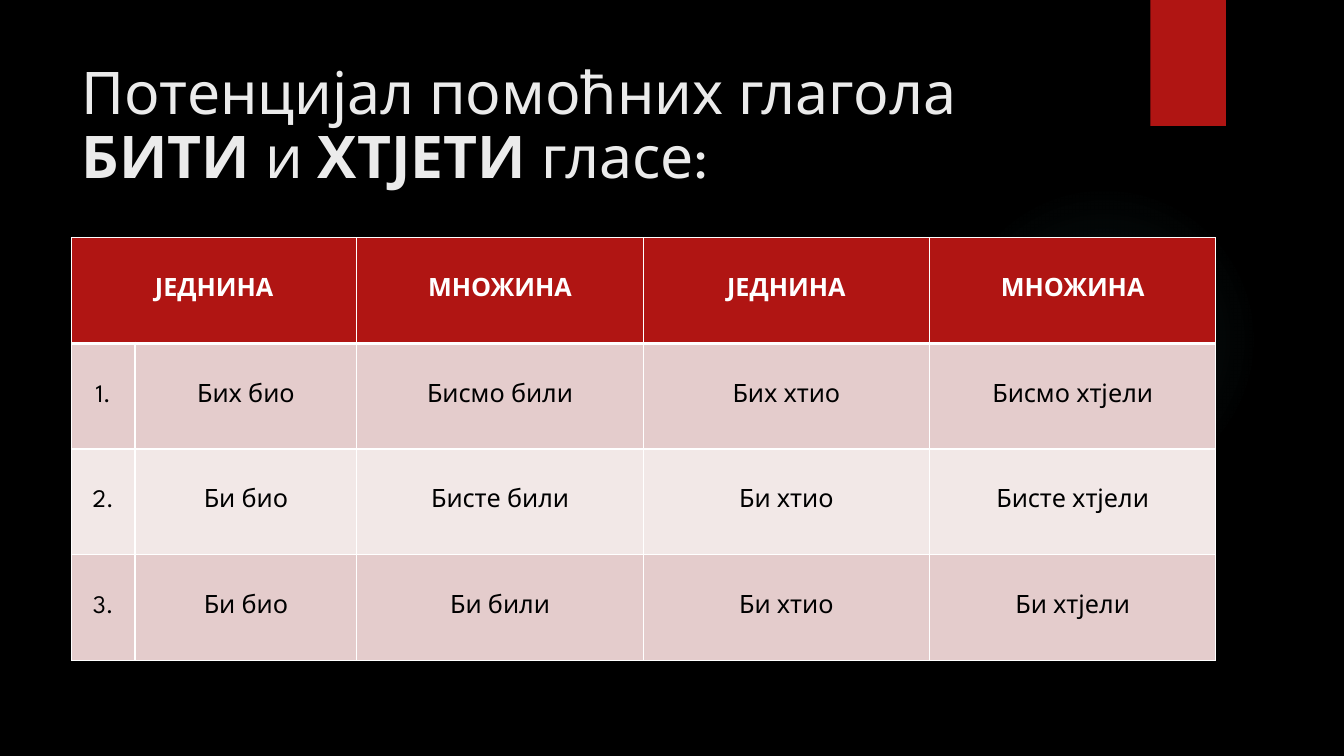
from lxml import etree
from pptx import Presentation
from pptx import util as u
from pptx.dml.color import RGBColor
from pptx.enum import shapes, text
from pptx.oxml import parse_xml
from pptx.oxml.ns import nsdecls, qn

FONT = "League Spartan"
BLACK, WHITE, RED = "000000", "FFFFFF", "B01513"
TITLE_COLOR, GLOW = "EBEBEB", "50B9C1"
BANDS = ("E4CCCC", "F2E8E7")

TITLE_RUNS = [("Потенцијал помоћних глагола ", False), ("БИТИ ", True),
              ("и ", False), ("ХТЈЕТИ ", True), ("гласе:", False)]
CONJUGATION = [
    ["ЈЕДНИНА", "", "МНОЖИНА", "ЈЕДНИНА", "МНОЖИНА"],
    ["1.", "Бих био", "Бисмо били", "Бих хтио", "Бисмо хтјели"],
    ["2.", "Би био", "Бисте били", "Би хтио", "Бисте хтјели"],
    ["3.", "Би био", "Би били", "Би хтио", "Би хтјели"],
]
COLUMN_WIDTHS = [0.63, 2.2, 2.84, 2.84, 2.84]


def paint(fill, color):
    fill.solid()
    fill.fore_color.rgb = RGBColor.from_string(color)


def style_font(font, size, color, bold=None):
    font.name, font.size, font.bold = FONT, u.Pt(size), bold
    font.color.rgb = RGBColor.from_string(color)


def add_plain_shape(slide, kind, box):
    shape = slide.shapes.add_shape(kind, *map(u.Inches, box))
    shape.shadow.inherit = False
    shape.line.fill.background()
    return shape


def add_backdrop(slide, glow_box, tab_box):
    paint(slide.background.fill, BLACK)

    # Faint glow, fading outwards
    glow = add_plain_shape(slide, shapes.MSO_SHAPE.OVAL, glow_box)
    stops = "".join(
        f'<a:gs pos="{pos * 1000}"><a:srgbClr val="{GLOW}">'
        f'<a:alpha val="{alpha * 1000}"/></a:srgbClr></a:gs>'
        for pos, alpha in [(0, 7), (36, 6), (69, 0)])
    gradient = parse_xml(
        f'<a:gradFill {nsdecls("a")}><a:gsLst>{stops}</a:gsLst><a:path path="circle">'
        '<a:fillToRect l="50000" t="50000" r="50000" b="50000"/></a:path></a:gradFill>')
    glow._element.spPr.find(qn("a:prstGeom")).addnext(gradient)

    # Red tab at the top edge
    tab = add_plain_shape(slide, shapes.MSO_SHAPE.RECTANGLE, tab_box)
    paint(tab.fill, RED)


def add_title(slide, box):
    title = slide.shapes.title
    title.left, title.top, title.width, title.height = map(u.Inches, box)
    frame = title.text_frame
    frame.word_wrap = True
    frame.auto_size = text.MSO_AUTO_SIZE.NONE
    frame.vertical_anchor = text.MSO_ANCHOR.MIDDLE
    heading = frame.paragraphs[0]
    heading.alignment = text.PP_ALIGN.LEFT
    heading.line_spacing = 0.9
    for words, bold in TITLE_RUNS:
        run = heading.add_run()
        run.text = words
        style_font(run.font, 42, TITLE_COLOR, bold)


def set_borders(cell, top, bottom):
    properties = cell._tc.get_or_add_tcPr()
    sides = {"lnL": 1, "lnR": 1, "lnT": top, "lnB": bottom}
    for index, (side, points) in enumerate(sides.items()):
        line = etree.Element(qn(f"a:{side}"), w=str(u.Pt(points)))
        solid = etree.SubElement(line, qn("a:solidFill"))
        etree.SubElement(solid, qn("a:srgbClr"), val=WHITE)
        properties.insert(index, line)


def add_conjugation_table(slide, box):
    frame = slide.shapes.add_table(len(CONJUGATION), len(COLUMN_WIDTHS),
                                   *map(u.Inches, box))
    table = frame.table
    for column, width in zip(table.columns, COLUMN_WIDTHS):
        column.width = u.Inches(width)
    for r, forms in enumerate(CONJUGATION):
        header = r == 0
        for c, form in enumerate(forms):
            cell = table.cell(r, c)
            cell.vertical_anchor = text.MSO_ANCHOR.MIDDLE
            paint(cell.fill, RED if header else BANDS[(r - 1) % 2])
            set_borders(cell, 3 if r == 1 else 1, 3 if header else 1)
            cell.text = form
            paragraph = cell.text_frame.paragraphs[0]
            paragraph.alignment = text.PP_ALIGN.CENTER
            style_font(paragraph.font, 18, WHITE if header else BLACK, header)
    # First heading covers the person number and the form
    table.cell(0, 0).merge(table.cell(0, 1))


def main():
    deck = Presentation()
    deck.slide_width, deck.slide_height = u.Inches(13.33), u.Inches(7.5)
    slide = deck.slides.add_slide(deck.slide_layouts.get_by_name("Title Only"))
    add_backdrop(slide, (9.41, 1.83, 3.08, 3.08), (11.41, 0, 0.75, 1.25))
    add_title(slide, (0.71, 0.5, 10.29, 1.53))
    add_conjugation_table(slide, (0.71, 2.36, 11.36, 4.19))
    deck.save("out.pptx")


if __name__ == "__main__":
    main()
